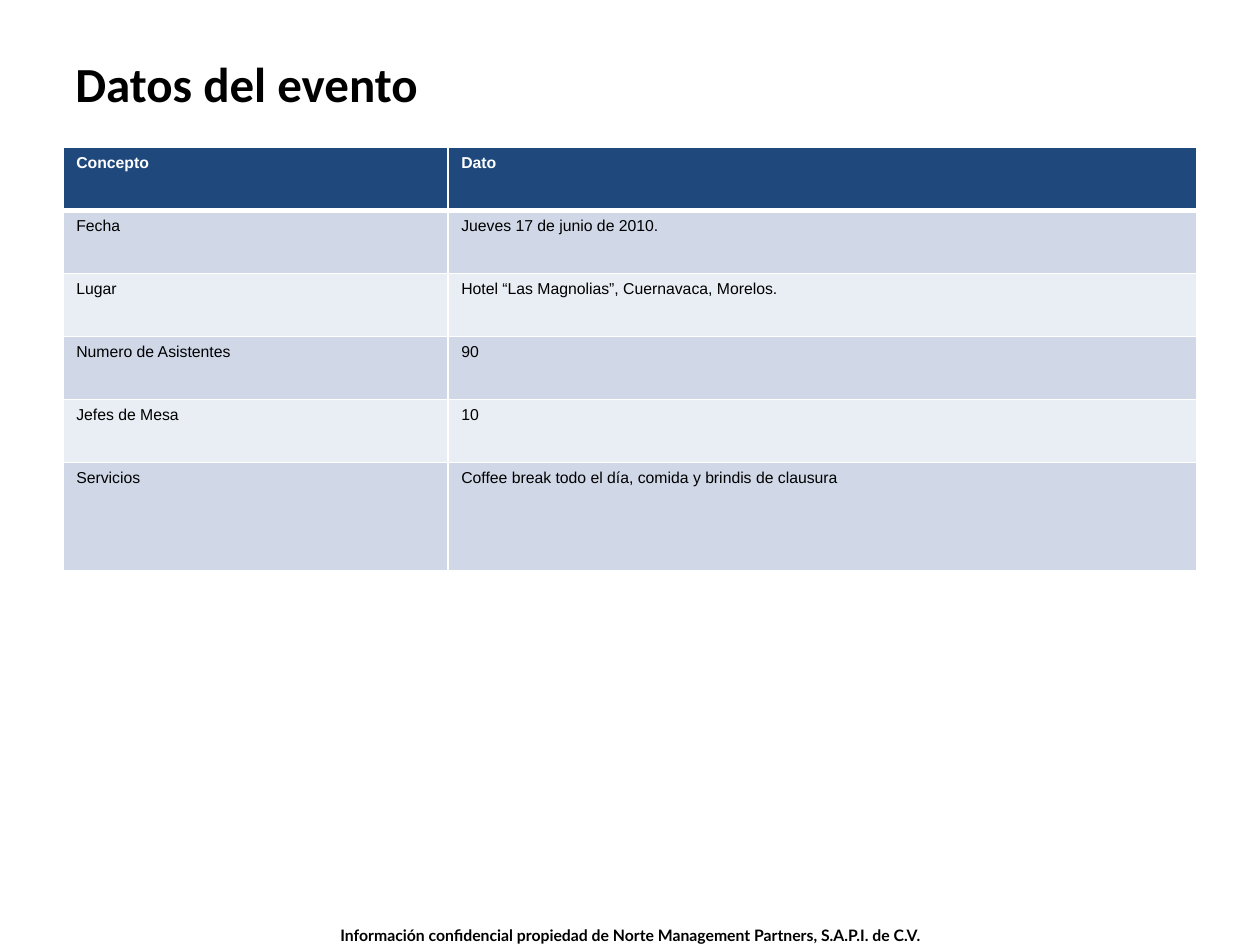
from dataclasses import dataclass

from lxml.etree import SubElement
from pptx import Presentation
from pptx.dml.color import RGBColor
from pptx.enum.text import MSO_ANCHOR, MSO_AUTO_SIZE, PP_ALIGN
from pptx.oxml.ns import qn
from pptx.util import Pt


@dataclass(frozen=True)
class Theme:
    title_font: str = "Calibri"
    table_font: str = "Arial"
    footer_font: str = "Lato"
    title_size: float = 28
    small_size: float = 9
    text: str = "000000"
    white: str = "FFFFFF"
    header: str = "1F497D"
    bands: tuple = ("D0D8E8", "E9EDF4")
    thin: float = 1
    thick: float = 3


THEME = Theme()
ROWS = [
    ("Concepto", "Dato"),
    ("Fecha", "Jueves 17 de junio de 2010."),
    ("Lugar", "Hotel “Las Magnolias”, Cuernavaca, Morelos."),
    ("Numero de Asistentes", "90"),
    ("Jefes de Mesa", "10"),
    ("Servicios", "Coffee break todo el día, comida y brindis de clausura"),
]
COLUMN_WIDTHS = (220, 428)
ROW_HEIGHTS = (36,) * 5 + (62,)


def add_span(para, text, font, size, color, bold):
    span = para.add_run()
    span.text = text
    span.font.name = font
    span.font.size = Pt(size)
    span.font.bold = bold
    span.font.color.rgb = RGBColor.from_string(color)


def add_text(page, place, text, font, size, align, anchor, auto_size):
    box = page.shapes.add_textbox(*map(Pt, place))
    frame = box.text_frame
    frame.word_wrap = True
    frame.auto_size = auto_size
    frame.vertical_anchor = anchor
    para = frame.paragraphs[0]
    para.alignment = align
    add_span(para, text, font, size, THEME.text, True)


def set_borders(cell, top, bottom):
    """Draw white cell borders; call before filling, as the schema puts lines first."""
    properties = cell._tc.get_or_add_tcPr()
    widths = {"lnL": THEME.thin, "lnR": THEME.thin, "lnT": top, "lnB": bottom}
    for side, width in widths.items():
        line = SubElement(properties, qn(f"a:{side}"), w=str(Pt(width)))
        fill = SubElement(line, qn("a:solidFill"))
        SubElement(fill, qn("a:srgbClr"), val=THEME.white)


def add_event_table(page, left, top):
    frame = page.shapes.add_table(
        len(ROWS), len(COLUMN_WIDTHS), Pt(left), Pt(top),
        Pt(sum(COLUMN_WIDTHS)), Pt(sum(ROW_HEIGHTS)))
    table = frame.table
    for column, width in zip(table.columns, COLUMN_WIDTHS):
        column.width = Pt(width)
    for index, (row, height, texts) in enumerate(zip(table.rows, ROW_HEIGHTS, ROWS)):
        row.height = Pt(height)
        is_header = index == 0
        fill = THEME.header if is_header else THEME.bands[(index - 1) % 2]
        color = THEME.white if is_header else THEME.text
        for cell, text in zip(row.cells, texts):
            set_borders(cell,
                        top=THEME.thick if index == 1 else THEME.thin,
                        bottom=THEME.thick if is_header else THEME.thin)
            cell.fill.solid()
            cell.fill.fore_color.rgb = RGBColor.from_string(fill)
            cell.margin_left = cell.margin_right = Pt(7.6)
            add_span(cell.text_frame.paragraphs[0], text, THEME.table_font,
                     THEME.small_size, color, is_header)


def main():
    deck = Presentation()
    deck.slide_width, deck.slide_height = Pt(720), Pt(540)
    page = deck.slides.add_slide(deck.slide_layouts[6])
    add_text(page, (110.88, 525.6, 498.24, 18),
             "Información confidencial propiedad de Norte Management Partners, S.A.P.I. de C.V.",
             THEME.footer_font, THEME.small_size, PP_ALIGN.CENTER,
             MSO_ANCHOR.TOP, MSO_AUTO_SIZE.SHAPE_TO_FIT_TEXT)
    add_text(page, (36, 21.6, 648, 52), "Datos del evento",
             THEME.title_font, THEME.title_size, PP_ALIGN.LEFT,
             MSO_ANCHOR.MIDDLE, MSO_AUTO_SIZE.NONE)
    add_event_table(page, 36, 84.24)
    deck.save("out.pptx")


if __name__ == "__main__":
    main()
